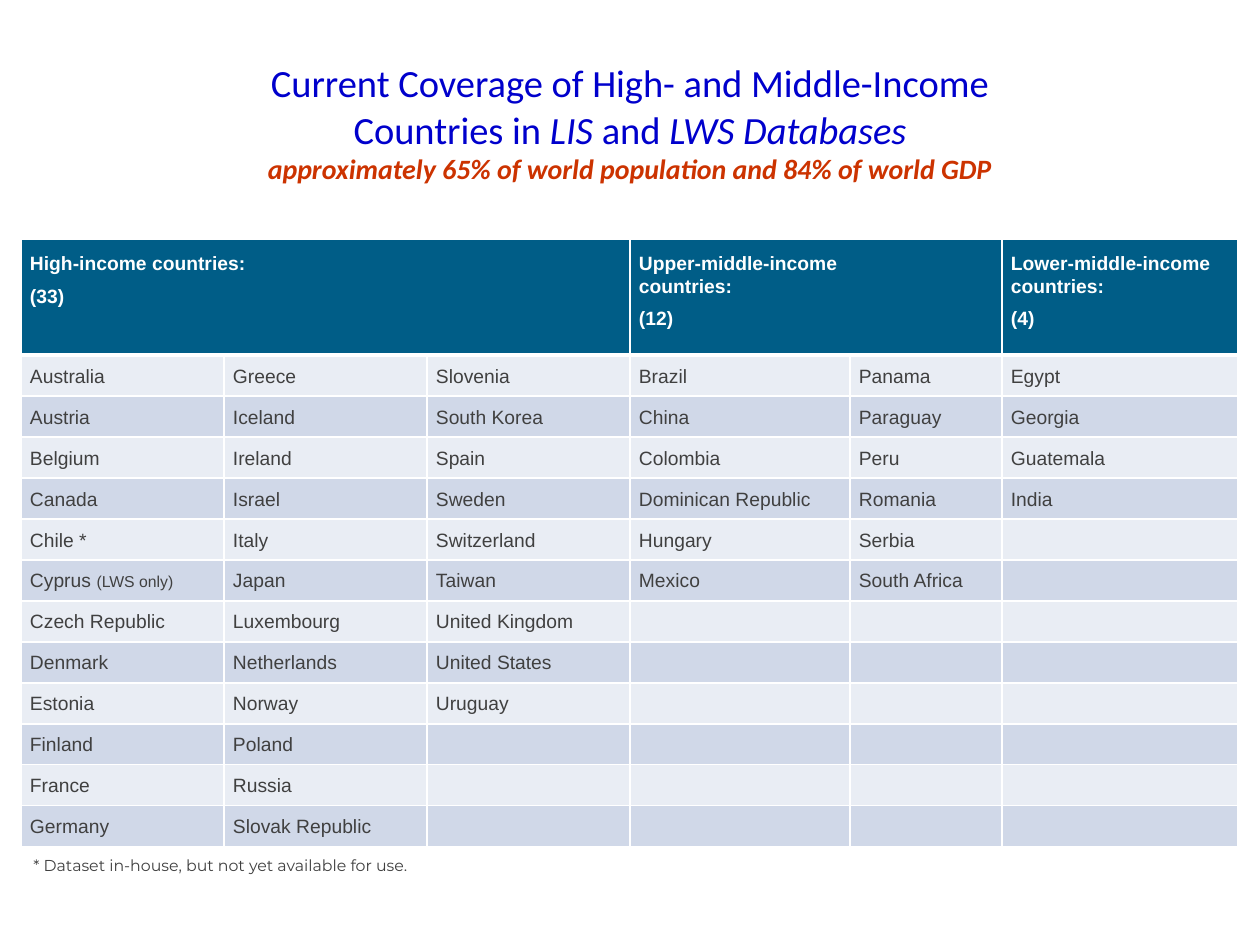
"""Build a slide listing the countries covered, grouped by income level."""
from itertools import zip_longest

from lxml import etree
from pptx import Presentation, util as u
from pptx.dml.color import RGBColor
from pptx.enum import text
from pptx.oxml.ns import qn

SCALE = 914400 / 126
HUES = {"blue": "0000CC", "red": "CC3300", "head": "005D87", "ink": "404040",
        "light": "E9EDF4", "dark": "D0D8E8", "white": "FFFFFF"}
WIDTHS = [203, 203, 203, 220, 152, 236]
HEAD_H, ROW_H = 116, 41
HEADS = [(0, 2, ["High-income countries:"], "(33)"),
         (3, 4, ["Upper-middle-income", "countries:"], "(12)"),
         (5, 5, ["Lower-middle-income countries:"], "(4)")]
LANDS = [
    ["Australia", "Austria", "Belgium", "Canada", "Chile *", "Cyprus |(LWS only)",
     "Czech Republic", "Denmark", "Estonia", "Finland", "France", "Germany"],
    ["Greece", "Iceland", "Ireland", "Israel", "Italy", "Japan", "Luxembourg",
     "Netherlands", "Norway", "Poland", "Russia", "Slovak Republic"],
    ["Slovenia", "South Korea", "Spain", "Sweden", "Switzerland", "Taiwan",
     "United Kingdom", "United States", "Uruguay"],
    ["Brazil", "China", "Colombia", "Dominican Republic", "Hungary", "Mexico"],
    ["Panama", "Paraguay", "Peru", "Romania", "Serbia", "South Africa"],
    ["Egypt", "Georgia", "Guatemala", "India"],
]


def px(n):
    """Turn pixels into EMU."""
    return u.Emu(round(n * SCALE))


def add_run(para, words, size, hue, face="Arial", bold=False, italic=False):
    """Add one formatted run to a paragraph."""
    run = para.add_run()
    run.text = words
    font = run.font
    font.size, font.name, font.bold, font.italic = u.Pt(size), face, bold, italic
    font.color.rgb = RGBColor.from_string(HUES[hue])


def add_title(slide):
    """Fill the title placeholder with two title lines and a subtitle."""
    title = slide.shapes.title
    title.left, title.top, title.width, title.height = map(px, (63, 38, 1134, 157))
    frame = title.text_frame
    frame.auto_size = text.MSO_AUTO_SIZE.NONE
    frame.vertical_anchor = text.MSO_ANCHOR.MIDDLE
    frame.margin_top = px(18)
    para = frame.paragraphs[0]
    para.alignment = text.PP_ALIGN.CENTER
    add_run(para, "Current Coverage of High- and Middle-Income", 22, "blue", "Calibri")
    para.add_line_break()
    for words, italic in (("Countries in ", False), ("LIS", True),
                          (" and ", False), ("LWS Databases", True)):
        add_run(para, words, 22, "blue", "Calibri", italic=italic)
    para.add_line_break()
    add_run(para, "approximately 65% of world population and 84% of world GDP",
            16, "red", "Calibri", bold=True, italic=True)


def add_edges(cell, base):
    """Draw white borders round a cell, with the given bottom width."""
    props = cell._tc.get_or_add_tcPr()
    for side, width in (("L", 1), ("R", 1), ("T", 1), ("B", base)):
        line = etree.SubElement(props, qn(f"a:ln{side}"), w=str(u.Pt(width)))
        fill = etree.SubElement(line, qn("a:solidFill"))
        etree.SubElement(fill, qn("a:srgbClr"), val=HUES["white"])


def style_cell(cell, hue, base=1, top=0):
    """Set the borders, fill and margins of a cell."""
    add_edges(cell, base)
    cell.fill.solid()
    cell.fill.fore_color.rgb = RGBColor.from_string(HUES[hue])
    cell.margin_left = cell.margin_right = px(9)
    cell.margin_top, cell.margin_bottom = px(top), 0


def add_heads(table):
    """Fill the header row, merging each group's columns."""
    for cell in table.rows[0].cells:
        style_cell(cell, "head", 2.25, 13)
    for first, last, lines, count in HEADS:
        cell = table.cell(0, first)
        if last > first:
            cell.merge(table.cell(0, last))
        frame = cell.text_frame
        for i, words in enumerate(lines + [count]):
            para = frame.add_paragraph() if i else frame.paragraphs[0]
            para.line_spacing = 1.5 if words == count else 1.07
            add_run(para, words, 11, "white", bold=True)


def add_lands(table):
    """Fill the banded country rows."""
    for r, names in enumerate(zip_longest(*LANDS, fillvalue=""), 1):
        for c, name in enumerate(names):
            cell = table.cell(r, c)
            style_cell(cell, "light" if r % 2 else "dark")
            if name:
                para = cell.text_frame.paragraphs[0]
                para.line_spacing = 1.5
                for words, size in zip(name.split("|"), (11, 9)):
                    add_run(para, words, size, "ink")


def add_grid(slide):
    """Add the country table."""
    count = max(map(len, LANDS))
    frame = slide.shapes.add_table(count + 1, len(WIDTHS), px(21), px(239),
                                   px(sum(WIDTHS)), px(HEAD_H + count * ROW_H))
    table = frame.table
    for col, width in zip(table.columns, WIDTHS):
        col.width = px(width)
    for r, row in enumerate(table.rows):
        row.height = px(ROW_H if r else HEAD_H)
    add_heads(table)
    add_lands(table)


def add_note(slide):
    """Add the footnote under the table."""
    box = slide.shapes.add_textbox(px(21), px(850), px(640), px(32))
    frame = box.text_frame
    frame.word_wrap = True
    frame.auto_size = text.MSO_AUTO_SIZE.SHAPE_TO_FIT_TEXT
    add_run(frame.paragraphs[0], "* Dataset in-house, but not yet available for use.",
            9, "ink", "Montserrat")


def main():
    """Build and save the slide."""
    deck = Presentation()
    deck.slide_width, deck.slide_height = px(1260), px(945)
    slide = deck.slides.add_slide(deck.slide_layouts[5])
    add_title(slide)
    add_note(slide)
    add_grid(slide)
    deck.save("out.pptx")


if __name__ == "__main__":
    main()
